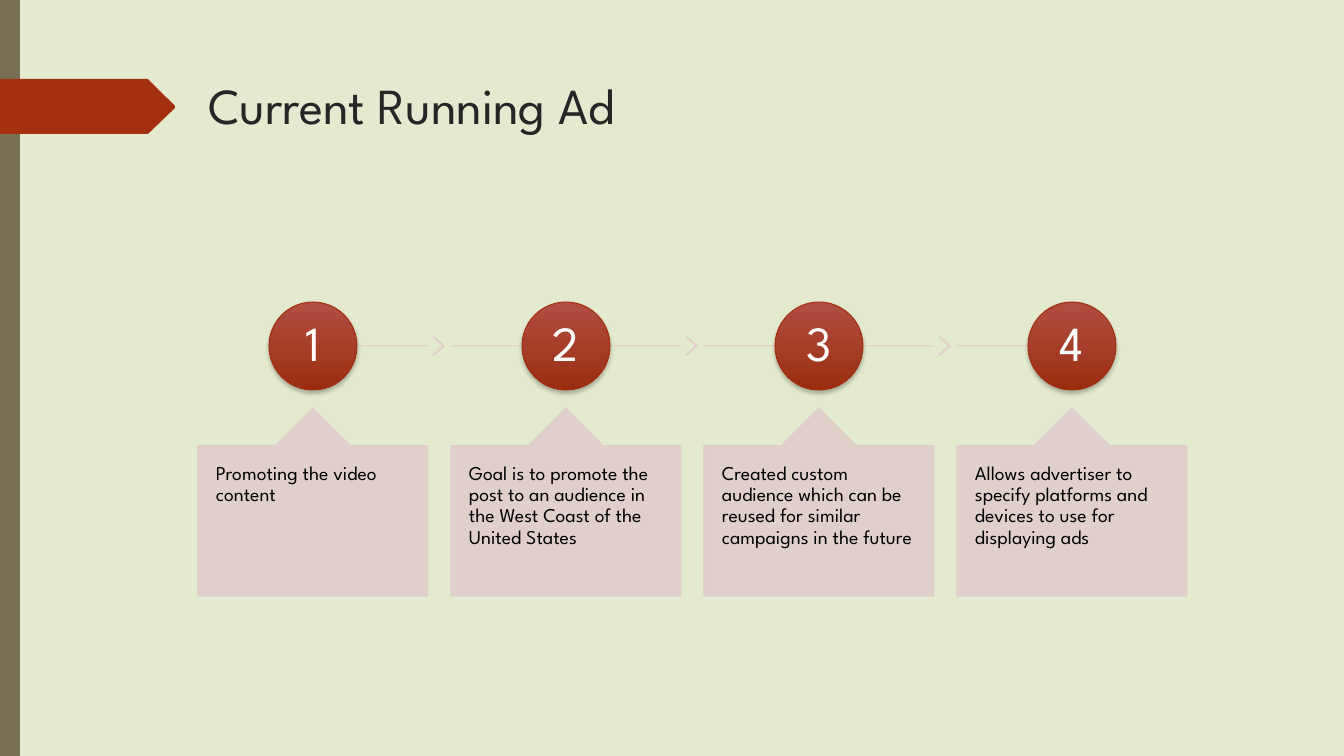
from lxml import etree
from pptx import Presentation
from pptx.dml.color import RGBColor
from pptx.enum.shapes import MSO_CONNECTOR, MSO_SHAPE
from pptx.enum.text import MSO_ANCHOR, PP_ALIGN
from pptx.oxml.ns import qn
from pptx.util import Pt

PX = 914400 / 100.8
FONT = "League Spartan"
SAGE = RGBColor(0xE3, 0xEA, 0xCF)
OLIVE = RGBColor(0x76, 0x6F, 0x54)
RUST = RGBColor(0xA5, 0x30, 0x10)
RUST_LIGHT = RGBColor(0xB1, 0x4E, 0x43)
RUST_DARK = RGBColor(0x9A, 0x2D, 0x0F)
PINK = RGBColor(0xE1, 0xCD, 0xCC)
INK = RGBColor(0x26, 0x26, 0x26)
BLACK = RGBColor(0, 0, 0)
WHITE = RGBColor(0xFF, 0xFF, 0xFF)

RECT, OVAL = MSO_SHAPE.RECTANGLE, MSO_SHAPE.OVAL
CALLOUT, CHEVRON = MSO_SHAPE.UP_ARROW_CALLOUT, MSO_SHAPE.CHEVRON
STRAIGHT = MSO_CONNECTOR.STRAIGHT
TOP, MIDDLE = MSO_ANCHOR.TOP, MSO_ANCHOR.MIDDLE
LEFT, CENTER = PP_ALIGN.LEFT, PP_ALIGN.CENTER

STEPS = [
    "Promoting the video content",
    "Goal is to promote the post to an audience in the West Coast of the United States",
    "Created custom audience which can be reused for similar campaigns in the future",
    "Allows advertiser to specify platforms and devices to use for displaying ads",
]
STEP_LEFT, STEP_PITCH, CARD_W = 198, 253, 230
CIRCLE, LINE_Y = 88, 346


def px(*lengths):
    return [round(n * PX) for n in lengths]


def write(sp, text, size, color, align, anchor, inset):
    tf = sp.text_frame
    tf.word_wrap = True
    tf.vertical_anchor = anchor
    tf.margin_left = tf.margin_top = tf.margin_right = tf.margin_bottom = px(inset)[0]
    p = tf.paragraphs[0]
    p.text = text
    p.alignment = align
    p.line_spacing = 0.9
    p.font.name, p.font.size, p.font.color.rgb = FONT, Pt(size), color


prs = Presentation()
prs.slide_width, prs.slide_height = px(1344, 756)
s = prs.slides.add_slide(prs.slide_layouts[5])
s.background.fill.solid()
s.background.fill.fore_color.rgb = SAGE

# Side bar and title tag
bar = s.shapes.add_shape(RECT, *px(0, 0, 20, 756))
builder = s.shapes.build_freeform(0, 79, scale=PX)
builder.add_line_segments([(148, 79), (175, 106), (175, 108), (148, 134), (0, 134)])
tag = builder.convert_to_shape()
for sp, color in ((bar, OLIVE), (tag, RUST)):
    sp.shadow.inherit = False
    sp.fill.solid()
    sp.fill.fore_color.rgb = color
    sp.line.fill.background()

# Title
title = s.shapes.title
title.left, title.top, title.width, title.height = px(198, 69, 1070, 141)
title.text_frame.vertical_anchor = TOP
p = title.text_frame.paragraphs[0]
p.text = "Current Running Ad"
p.alignment = LEFT
p.font.name, p.font.size, p.font.color.rgb = FONT, Pt(36), INK

# Numbered steps
last = len(STEPS) - 1
for i, text in enumerate(STEPS):
    left = STEP_LEFT + i * STEP_PITCH
    center, right = left + CARD_W // 2, left + CARD_W

    # Timeline segment behind the circle
    start = center if i == 0 else left
    end = center if i == last else right
    track = s.shapes.add_connector(STRAIGHT, *px(start, LINE_Y, end, LINE_Y))
    etree.SubElement(track._element.spPr, qn("a:effectLst"))

    # Numbered circle
    circle = s.shapes.add_shape(
        OVAL, *px(center - CIRCLE // 2, LINE_Y - CIRCLE // 2, CIRCLE, CIRCLE))
    circle.fill.gradient()
    circle.fill.gradient_angle = 270
    for stop, color in zip(circle.fill.gradient_stops, (RUST_LIGHT, RUST_DARK)):
        stop.color.rgb = color
    circle.line.color.rgb = RUST
    circle.line.width = Pt(0.75)
    circle.shadow.inherit = False
    effects = circle._element.spPr.find(qn("a:effectLst"))
    shadow = etree.SubElement(effects, qn("a:outerShdw"), blurRad=str(Pt(3)),
                              dist=str(Pt(2)), dir="5400000", rotWithShape="0")
    black = etree.SubElement(shadow, qn("a:srgbClr"), val=str(BLACK))
    etree.SubElement(black, qn("a:alpha"), val="25000")
    write(circle, str(i + 1), 35, WHITE, CENTER, MIDDLE, 3)

    # Callout card
    card = s.shapes.add_shape(CALLOUT, *px(left, 408, CARD_W, 188))
    for k, value in enumerate((0.5, 0.2, 0.2, 1)):
        card.adjustments[k] = value
    write(card, text, 14, BLACK, LEFT, TOP, 18)
    pink_shapes = [card]

    # Chevron towards the next step
    if i < last:
        chevron = s.shapes.add_shape(CHEVRON, *px(right + 5, LINE_Y - 9, 11, 18))
        chevron.adjustments[0] = 0.9
        pink_shapes.append(chevron)

    # Translucent pink
    for sp in pink_shapes:
        sp.shadow.inherit = False
        sp.fill.solid()
        sp.fill.fore_color.rgb = PINK
    for sp in pink_shapes + [track]:
        sp.line.color.rgb = PINK
        sp.line.width = Pt(0.75)
        for color in sp._element.spPr.iter(qn("a:srgbClr")):
            etree.SubElement(color, qn("a:alpha"), val="90000")

prs.save("out.pptx")
